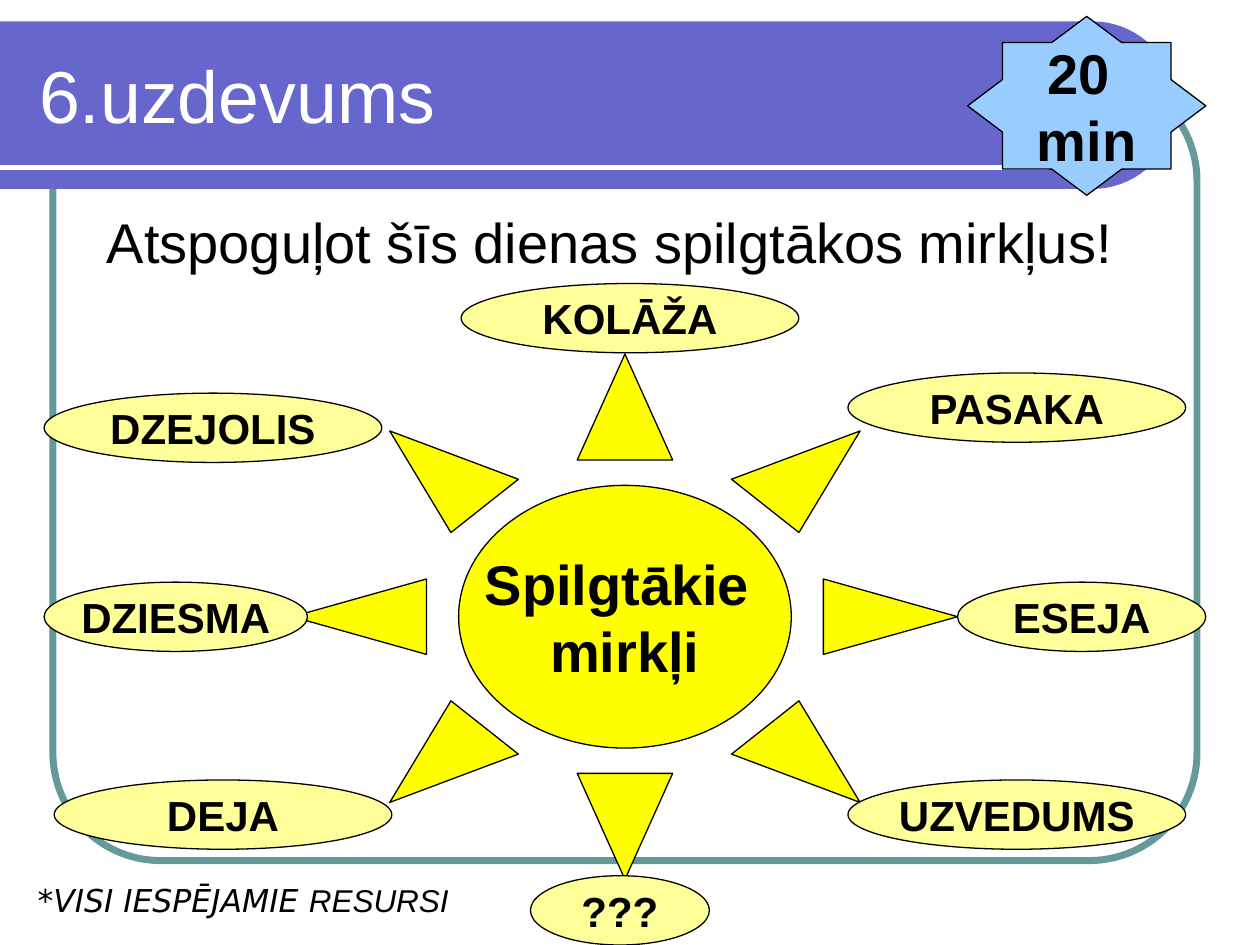
import math

from pptx import Presentation
from pptx import util as u
from pptx.dml.color import RGBColor
from pptx.enum import shapes, text
from pptx.oxml import parse_xml
from pptx.oxml.ns import nsdecls

COLORS = {
    "frame": "669999",
    "banner": "6666CC",
    "white": "FFFFFF",
    "black": "000000",
    "star": "99CCFF",
    "sun": "FFFF00",
    "idea": "FFFF99",
}

IDEAS = [
    ("KOLĀŽA", 3.66, 2.25, 2.68),
    ("PASAKA", 6.73, 2.96, 2.68),
    ("ESEJA", 7.6, 4.62, 1.97),
    ("DZEJOLIS", 0.35, 3.12, 2.68),
    ("DZIESMA", 0.35, 4.62, 2.09),
    ("UZVEDUMS", 6.73, 6.19, 2.68),
    ("DEJA", 0.43, 6.19, 2.68),
    ("???", 4.21, 6.95, 1.42),
]


def color(name):
    """Return the named palette colour."""
    return RGBColor.from_string(COLORS[name])


def inches(*values):
    """Convert several lengths to Inches."""
    return [u.Inches(value) for value in values]


def style_span(span, size, tint="black", font="Arial", bold=False, italic=False):
    """Set the font of one run."""
    span.font.name = font
    span.font.size = u.Pt(size)
    span.font.color.rgb = color(tint)
    span.font.bold = bold
    span.font.italic = italic


def add_label_shape(page, kind, box, fill, label, size, adjustment=None):
    """Add an outlined shape with centred bold text."""
    shape = page.shapes.add_shape(kind, *inches(*box))
    shape.shadow.inherit = False
    if adjustment is not None:
        shape.adjustments[0] = adjustment
    shape.fill.solid()
    shape.fill.fore_color.rgb = color(fill)
    shape.line.color.rgb = color("black")
    shape.line.width = u.Pt(0.75)
    frame = shape.text_frame
    frame.word_wrap = False
    frame.vertical_anchor = text.MSO_ANCHOR.MIDDLE
    frame.text = label
    for para in frame.paragraphs:
        para.alignment = text.PP_ALIGN.CENTER
        for span in para.runs:
            style_span(span, size, bold=True)


def add_frame(page):
    """Add the rounded outline around the content."""
    frame = page.shapes.add_shape(
        shapes.MSO_SHAPE.ROUNDED_RECTANGLE, *inches(0.42, 0.58, 9.08, 6.25)
    )
    frame.shadow.inherit = False
    frame.adjustments[0] = 0.137
    frame.fill.background()
    frame.line.color.rgb = color("frame")
    frame.line.width = u.Pt(4)


def add_banner(page):
    """Add the title band with its round right end and white rule."""
    top, radius, center_x = 0.17, 0.665, 8.67
    angles = [math.radians(degree) for degree in range(-90, 91, 5)]
    points = [
        inches(center_x + radius * math.cos(a), top + radius + radius * math.sin(a))
        for a in angles
    ]
    points.append(inches(0, top + 2 * radius))
    builder = page.shapes.build_freeform(*inches(0, top))
    builder.add_line_segments(points, close=True)
    banner = builder.convert_to_shape()
    banner.shadow.inherit = False
    banner.fill.solid()
    banner.fill.fore_color.rgb = color("banner")
    banner.line.fill.background()

    rule = page.shapes.add_connector(
        shapes.MSO_CONNECTOR.STRAIGHT, *inches(0, 1.33, 8.83, 1.33)
    )
    rule.line.color.rgb = color("white")
    rule.line.width = u.Pt(3)
    rule.element.spPr.append(parse_xml(f"<a:effectLst {nsdecls('a')}/>"))


def place_title(page, label):
    """Put the title on top of the banner."""
    title = page.shapes.title
    page.shapes.element.append(title.element)
    title.left, title.top, title.width, title.height = inches(0.21, 0.25, 8.77, 1)
    frame = title.text_frame
    frame.text = label
    frame.auto_size = text.MSO_AUTO_SIZE.NONE
    frame.vertical_anchor = text.MSO_ANCHOR.MIDDLE
    para = frame.paragraphs[0]
    para.alignment = text.PP_ALIGN.LEFT
    style_span(para.runs[0], 42, "white")


def add_text(page, box, spans, size, spacing, italic=False):
    """Add a wrapped line of text made of (words, font) spans."""
    frame = page.shapes.add_textbox(*inches(*box)).text_frame
    frame.word_wrap = True
    para = frame.paragraphs[0]
    para.line_spacing = spacing
    para.space_before = u.Pt(size * 0.2)
    for words, font in spans:
        span = para.add_run()
        span.text = words
        style_span(span, size, font=font, italic=italic)


def main():
    """Build the slide and save it."""
    deck = Presentation()
    deck.slide_width, deck.slide_height = inches(10, 7.5)
    page = deck.slides.add_slide(deck.slide_layouts[5])
    add_frame(page)
    add_banner(page)
    place_title(page, "6.uzdevums")
    task = [("Atspoguļot šīs dienas spilgtākos mirkļus!", "Arial")]
    add_text(page, (0.75, 1.7, 8.67, 0.94), task, 32, 0.8)
    note = [("*VISI IESPĒJAMIE ", "DejaVu Sans"), ("RESURSI", "Arial")]
    add_text(page, (0.2, 6.98, 8.98, 0.37), note, 18, 0.9, italic=True)
    kinds = shapes.MSO_SHAPE
    add_label_shape(
        page, kinds.STAR_8_POINT, (7.68, 0.13, 1.89, 1.42), "star", "20 \nmin", 32, 0.383
    )
    add_label_shape(
        page, kinds.SUN, (2.32, 2.81, 5.28, 4.17), "sun", "Spilgtākie \nmirkļi", 32, 0.25
    )
    for label, left, top, width in IDEAS:
        add_label_shape(page, kinds.OVAL, (left, top, width, 0.55), "idea", label, 24)
    deck.save("out.pptx")


if __name__ == "__main__":
    main()
